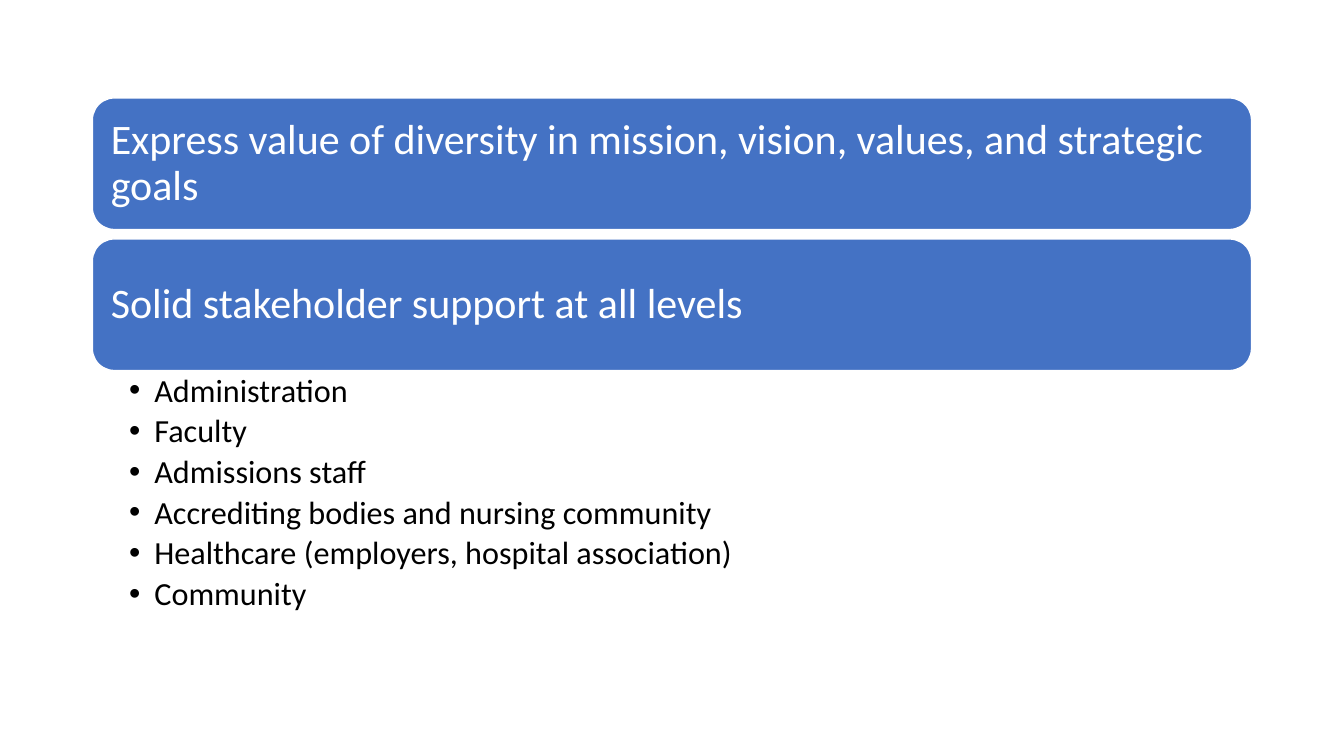
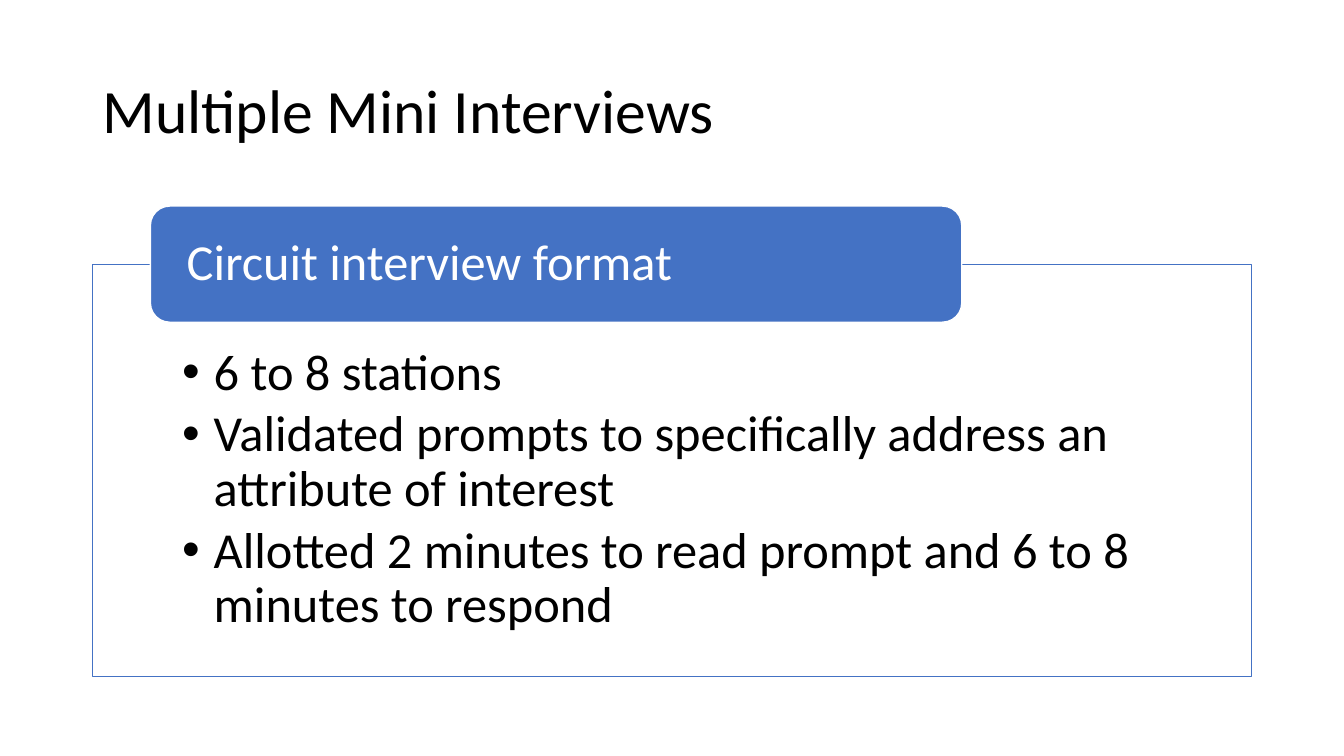
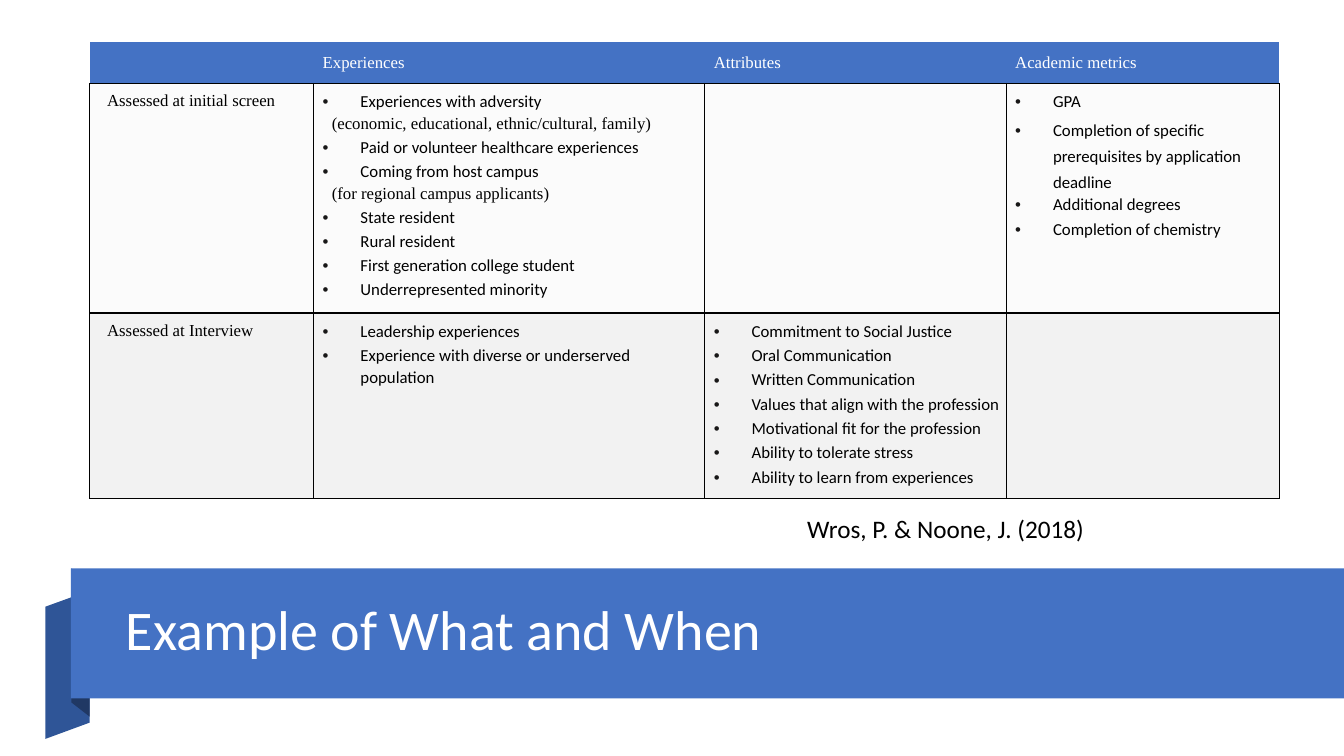
from dataclasses import dataclass, replace
from lxml.etree import SubElement as Sub
from pptx import Presentation
from pptx.dml.color import RGBColor as RGB
from pptx.enum.shapes import MSO_SHAPE as Kind
from pptx.enum.text import MSO_ANCHOR as Anchor, MSO_AUTO_SIZE as Fit, PP_ALIGN as Align
from pptx.oxml import parse_xml
from pptx.oxml.ns import nsdecls, qn
from pptx.util import Pt


@dataclass(frozen=True)
class Look:
    size: float
    ink: str
    face: str = "Calibri"
    lead: float = 0.9
    after: float = 0
    left: float = 0
    hang: float = 0
    dot: str = "000000"


class Theme:
    white, black = "FFFFFF", "000000"
    blue, deep, navy = "4472C4", "2F5597", "203864"
    gray, dot = "F2F2F2", "181717"
    title = Look(44, black)
    banner = Look(40, white)
    head = Look(30, white)
    tag = Look(36, white)
    list = Look(23, black, after=4.2, hang=18)
    point = Look(36, black, after=5.1, hang=22.5)
    cite = Look(18, black, lead=1)
    col = Look(12, white, "Times New Roman", 1.07)
    row = replace(col, ink=black, left=6)
    note = replace(row, left=6.5, after=2)
    item = Look(12, black, lead=1.07, after=1.7, hang=27, dot=dot)
    tight = replace(item, after=0.6)
    loose = replace(tight, lead=1.27)


def paint(shape, ink, edge=None):
    shape.shadow.inherit = False
    shape.fill.solid()
    shape.fill.fore_color.rgb = RGB.from_string(ink)
    if edge:
        shape.line.color.rgb = RGB.from_string(edge)
        shape.line.width = Pt(1)
    else:
        shape.line.fill.background()


def write(part, lines, ins=(7.2, 3.6, 7.2, 3.6), anchor=Anchor.MIDDLE):
    """Fill a shape or table cell with (look, text) lines."""
    frame = part.text_frame
    frame.word_wrap = True
    box = part if hasattr(part, "margin_left") else frame
    box.margin_left, box.margin_top, box.margin_right, box.margin_bottom = map(Pt, ins)
    box.vertical_anchor = anchor
    frame.text = "\n".join(text for _, text in lines)
    for para, (look, _) in zip(frame.paragraphs, lines):
        para.alignment = Align.LEFT
        para.line_spacing = look.lead
        para.space_before, para.space_after = Pt(0), Pt(look.after)
        props = para._p.get_or_add_pPr()
        props.set("marL", str(Pt(look.left + look.hang)))
        props.set("indent", str(-Pt(look.hang)))
        if look.hang:
            tint = Sub(props, qn("a:buClr"))
            Sub(tint, qn("a:srgbClr"), val=look.dot)
            Sub(props, qn("a:buFont"), typeface="Arial")
            Sub(props, qn("a:buChar"), char="•")
        for run in para.runs:
            run.font.size, run.font.name = Pt(look.size), look.face
            run.font.color.rgb = RGB.from_string(look.ink)


deck = Presentation()
deck.slide_width, deck.slide_height = Pt(960), Pt(540)
titled, blank = deck.slide_layouts[5], deck.slide_layouts[6]
left, wide = 66, 828

# Slide 1: two statements and a list
slide = deck.slides.add_slide(blank)
heads = ["Express value of diversity in mission, vision, values, and strategic goals",
         "Solid stakeholder support at all levels"]
for i, text in enumerate(heads):
    bar = slide.shapes.add_shape(Kind.ROUNDED_RECTANGLE, Pt(left), Pt(70 + i * 100.7),
                                 Pt(wide), Pt(94))
    paint(bar, Theme.blue, Theme.white)
    write(bar, [(Theme.head, text)], (8.6, 8.6, 8.6, 8.6))
names = ["Administration", "Faculty", "Admissions staff",
         "Accrediting bodies and nursing community",
         "Healthcare (employers, hospital association)", "Community"]
box = slide.shapes.add_textbox(Pt(left), Pt(264.5), Pt(wide), Pt(186))
write(box, [(Theme.list, text) for text in names], (26.3, 2.9, 16.5, 2.9), Anchor.TOP)

# Slide 2: framed list with a tag
slide = deck.slides.add_slide(titled)
title = slide.shapes.title
title.left, title.top, title.width, title.height = Pt(left), Pt(28.8), Pt(wide), Pt(104.4)
write(title, [(Theme.title, "Multiple Mini Interviews")])
title.text_frame.auto_size = Fit.NONE
points = ["6 to 8 stations",
          "Validated prompts to specifically address an attribute of interest",
          "Allotted 2 minutes to read prompt and 6 to 8 minutes to respond"]
panel = slide.shapes.add_shape(Kind.RECTANGLE, Pt(left), Pt(188.8), Pt(wide), Pt(294.4))
paint(panel, Theme.white, Theme.blue)
write(panel, [(Theme.point, text) for text in points], (64.2, 59, 64.2, 20), Anchor.TOP)
tag = slide.shapes.add_shape(Kind.ROUNDED_RECTANGLE, Pt(107.4), Pt(147.2), Pt(579.6), Pt(83))
paint(tag, Theme.blue, Theme.white)
write(tag, [(Theme.tag, "Circuit interview format")], (21.9, 0, 21.9, 0))

# Slide 3: ribbon
slide = deck.slides.add_slide(titled)
folds = [
    (Theme.deep, [(64, 516.2), (32.4, 527.8), (32.4, 433.4), (64, 421.9)]),
    (Theme.navy, [(64, 511.9), (51, 501.8), (51, 406.1), (64, 416.9)]),
]
for ink, dots in folds:
    start, *rest = [(Pt(x), Pt(y)) for x, y in dots]
    pen = slide.shapes.build_freeform(*start)
    pen.add_line_segments(rest, close=True)
    paint(pen.convert_to_shape(), ink)
band = slide.shapes.add_shape(Kind.RECTANGLE, Pt(50.6), Pt(406.1), Pt(909.4), Pt(92.8))
paint(band, Theme.blue)
title = slide.shapes.title
title.left, title.top, title.width, title.height = Pt(82.8), Pt(414.7), Pt(845.3), Pt(74.2)
write(title, [(Theme.banner, "Example of What and When")])
title.text_frame.auto_size = Fit.NONE
band._element.addnext(title._element)

# Slide 3: table
col, row, note = Theme.col, Theme.row, Theme.note
item, tight, loose = Theme.item, Theme.tight, Theme.loose
cells = [
    [[], [(col, "Experiences")], [(col, "Attributes")], [(col, "Academic metrics")]],
    [[(row, "Assessed at initial screen")],
     [(tight, "Experiences with adversity"),
      (note, "(economic, educational, ethnic/cultural, family)"),
      (item, "Paid or volunteer healthcare experiences"),
      (tight, "Coming from host campus"),
      (note, "(for regional campus applicants)"),
      (item, "State resident"),
      (item, "Rural resident"),
      (item, "First generation college student"),
      (item, "Underrepresented minority")],
     [],
     [(item, "GPA"),
      (loose, "Completion of specific prerequisites by application deadline"),
      (item, "Additional degrees"),
      (item, "Completion of chemistry")]],
    [[(row, "Assessed at Interview")],
     [(item, "Leadership experiences"),
      (item, "Experience with diverse or underserved population")],
     [(item, "Commitment to Social Justice"),
      (item, "Oral Communication"),
      (item, "Written Communication"),
      (item, "Values that align with the profession"),
      (item, "Motivational fit for the profession"),
      (item, "Ability to tolerate stress"),
      (item, "Ability to learn from experiences")],
     []],
]
widths, heights = [160, 279.4, 215.3, 195.1], [29.6, 164, 132.4]
table = slide.shapes.add_table(3, 4, Pt(64), Pt(30), Pt(sum(widths)), Pt(sum(heights))).table
plain = "{2D5ABB26-0587-4C30-8999-92F81FD0307C}"
table._tbl.tblPr.find(qn("a:tableStyleId")).text = plain
for c, width in enumerate(widths):
    table.columns[c].width = Pt(width)
for r, (height, line) in enumerate(zip(heights, cells)):
    table.rows[r].height = Pt(height)
    for c, lines in enumerate(line):
        cell = table.cell(r, c)
        if lines:
            write(cell, lines, (6.5, 5, 3.6, 5), Anchor.TOP if r else Anchor.MIDDLE)
        cell.fill.solid()
        cell.fill.fore_color.rgb = RGB.from_string(Theme.gray if r else Theme.blue)
        props = cell._tc.get_or_add_tcPr()
        if r == 1:
            Sub(next(props.iter(qn("a:srgbClr"))), qn("a:alpha"), val="30000")
        # Borders come before the fill, in the order L, R, T, B
        for side in "BTRL" if r else "B":
            props.insert(0, parse_xml(
                f'<a:ln{side} {nsdecls("a")} w="{Pt(1)}"><a:solidFill>'
                f'<a:srgbClr val="{Theme.black}"/></a:solidFill></a:ln{side}>'))

# Slide 3: citation
box = slide.shapes.add_textbox(Pt(569.5), Pt(362.9), Pt(214.6), Pt(29))
write(box, [(Theme.cite, "Wros, P. & Noone, J. (2018)")], anchor=Anchor.TOP)
box.text_frame.word_wrap = False

deck.save("out.pptx")
